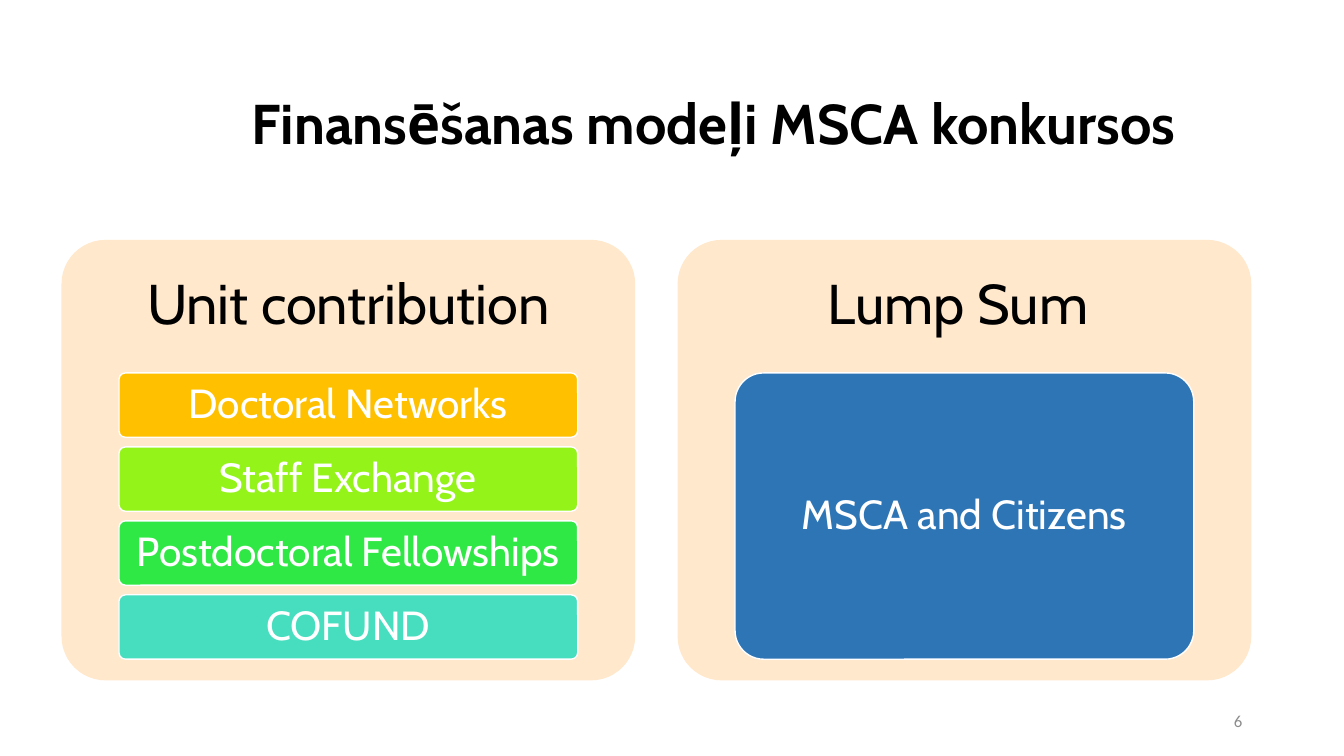
from pptx import Presentation, util as u
from pptx.dml.color import RGBColor
from pptx.enum import shapes, text

PX = 9144  # 100 px to the inch
COLOURS = {
    "black": "000000", "white": "FFFFFF", "grey": "8C8C8C", "panel": "FFE8CC",
    "amber": "FFC000", "lime": "94F319", "green": "30E845", "teal": "46DEBF",
    "blue": "2E75B6",
}
TITLE = {"size": 40, "colour": "black", "bold": True}
HEADING = {"size": 40, "colour": "black", "margins": (17, 17)}
ITEM = {"size": 29, "colour": "white", "margins": (8, 6)}
NUMBER = {"size": 12, "colour": "grey", "name": "Calibri", "spacing": 1.0,
          "align": text.PP_ALIGN.RIGHT}

PANEL_TOP, PANEL_WIDTH, PANEL_HEIGHT = 238, 569, 437
HEADING_HEIGHT = 131
ITEM_INDENT, ITEM_TOP, ITEM_WIDTH, ITEMS_HEIGHT, ITEM_GAP = 57, 370, 455, 284, 9.5
PANELS = [
    (61, "Unit contribution", [
        ("Doctoral Networks", "amber"), ("Staff Exchange", "lime"),
        ("Postdoctoral Fellowships", "green"), ("COFUND", "teal")]),
    (672, "Lump Sum ", [("MSCA and Citizens", "blue")]),
]


def emu(*lengths):
    return [u.Emu(round(length * PX)) for length in lengths]


def colour(name):
    return RGBColor.from_string(COLOURS[name])


def write(shape, words, size, colour_name, name="Cabin", bold=False,
          spacing=0.9, align=text.PP_ALIGN.CENTER, margins=(10, 5)):
    """Fill a shape's text frame with one formatted paragraph."""
    frame = shape.text_frame
    across, down = emu(*margins)
    frame_format = {
        "word_wrap": True, "auto_size": text.MSO_AUTO_SIZE.NONE,
        "vertical_anchor": text.MSO_ANCHOR.MIDDLE,
        "margin_left": across, "margin_right": across,
        "margin_top": down, "margin_bottom": down,
    }
    for key, value in frame_format.items():
        setattr(frame, key, value)
    paragraph = frame.paragraphs[0]
    paragraph.alignment = align
    paragraph.line_spacing = spacing
    run = paragraph.add_run()
    run.text = words
    for key, value in {"size": u.Pt(size), "name": name, "bold": bold}.items():
        setattr(run.font, key, value)
    run.font.color.rgb = colour(colour_name)


def write_styled(shape, words, style):
    options = dict(style)
    write(shape, words, options.pop("size"), options.pop("colour"), **options)


def add_title(slide, box, words):
    title = slide.shapes.title
    for key, value in zip(("left", "top", "width", "height"), emu(*box)):
        setattr(title, key, value)
    write_styled(title, words, TITLE)


def add_label(slide, box, words, style):
    write_styled(slide.shapes.add_textbox(*emu(*box)), words, style)


def add_rounded(slide, box, fill, outline=None):
    shape = slide.shapes.add_shape(
        shapes.MSO_SHAPE.ROUNDED_RECTANGLE, *emu(*box))
    shape.shadow.inherit = False
    shape.adjustments[0] = 0.1
    shape.fill.solid()
    shape.fill.fore_color.rgb = colour(fill)
    if outline:
        shape.line.color.rgb = colour(outline)
        shape.line.width = u.Pt(1)
    else:
        shape.line.fill.background()
    return shape


def add_panel(slide, left, heading, items):
    """Draw a panel whose items share the same total height."""
    add_rounded(slide, (left, PANEL_TOP, PANEL_WIDTH, PANEL_HEIGHT), "panel")
    add_label(slide, (left, PANEL_TOP, PANEL_WIDTH, HEADING_HEIGHT),
              heading, HEADING)
    pitch = (ITEMS_HEIGHT + ITEM_GAP) / len(items)
    for index, (words, fill) in enumerate(items):
        box = (left + ITEM_INDENT, ITEM_TOP + index * pitch,
               ITEM_WIDTH, pitch - ITEM_GAP)
        write_styled(add_rounded(slide, box, fill, "white"), words, ITEM)


def main():
    presentation = Presentation()
    presentation.slide_width, presentation.slide_height = emu(1333, 750)
    title_only = presentation.slide_layouts[5]
    slide = presentation.slides.add_slide(title_only)
    add_title(slide, (133, 53, 1150, 145), "Finansēšanas modeļi MSCA konkursos")
    for left, heading, items in PANELS:
        add_panel(slide, left, heading, items)
    add_label(slide, (942, 695, 300, 40), "6", NUMBER)
    presentation.save("out.pptx")


if __name__ == "__main__":
    main()
